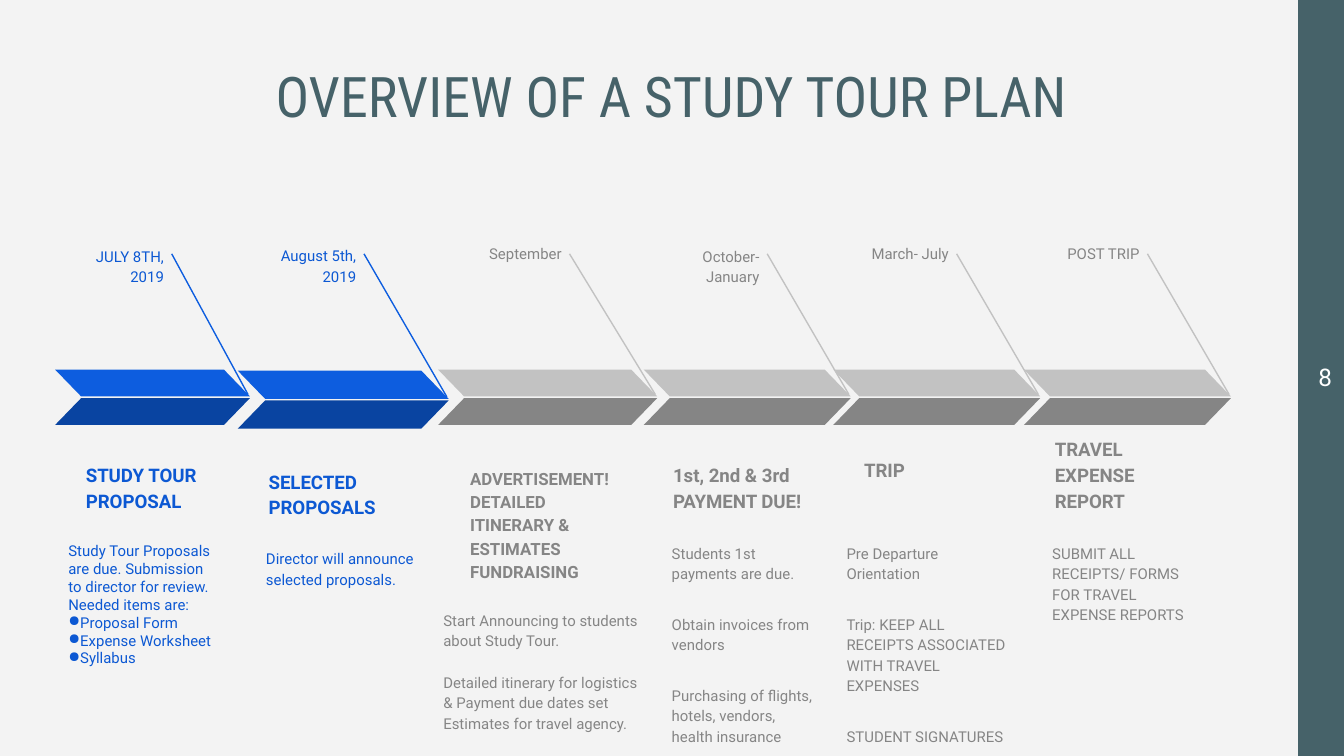
from dataclasses import dataclass

from lxml.etree import SubElement
from pptx import Presentation
from pptx.dml.color import RGBColor
from pptx.enum.shapes import MSO_CONNECTOR as Connector, MSO_SHAPE as Shape
from pptx.enum.text import MSO_ANCHOR as Anchor, PP_ALIGN as Align
from pptx.oxml.ns import qn
from pptx.util import Pt

BLUE = {"text": "0C58D3", "light": "0D5DDF", "dark": "0944A1"}
GREY = {"text": "858585", "light": "C2C2C2", "dark": "858585"}
TEAL, WHITE, PAPER = "466269", "FFFFFF", "F3F3F3"
INSET = 7.2
BULLET = "●"


@dataclass
class Stage:
    """Boxes are (left, top, width, height) from the corner of the stage."""
    box: tuple
    date: str
    heading: str
    body: list
    date_box: tuple
    heading_box: tuple
    body_box: tuple
    palette: dict
    heading_size: float = 10
    heading_anchor: Anchor = Anchor.BOTTOM
    body_spacing: float = 1.15
    band: float = 14.4


def para(text, before=0):
    return {"text": text, "before": before}


STAGES = [
    Stage((29.5, 124, 104.4), "JULY 8TH, 2019", "STUDY TOUR PROPOSAL",
          [para("Study Tour Proposals are due. Submission to director for review."),
           para("Needed items are:"), para(BULLET + "Proposal Form"),
           para(BULLET + "Expense Worksheet"), para(BULLET + "Syllabus")],
          (-4.3, 0, 69.8, 51), (9.4, 113, 85.7, 44.6), (0, 159, 95, 74),
          BLUE, body_spacing=1),
    Stage((127.4, 123.5, 113), "August 5th, 2019", "SELECTED PROPOSALS",
          [para("Director will announce selected proposals.")],
          (8, 0, 62.6, 25), (9.4, 115.5, 92.9, 46), (8, 162.5, 95, 76),
          BLUE, band=15.1),
    Stage((234.7, 124, 117.4), "September",
          "ADVERTISEMENT!\nDETAILED ITINERARY & ESTIMATES\nFUNDRAISING",
          [para("Start Announcing to students about Study Tour."),
           para("Detailed itinerary for logistics & Payment due dates set", 11),
           para("Estimates for travel agency.")],
          (5, 0, 68.4, 24), (10.1, 136.6, 96.5, 58.3), (-4.3, 195, 121.7, 114),
          GREY, heading_size=9),
    Stage((344.9, 124, 110.9), "October- January", "1st, 2nd & 3rd PAYMENT DUE!",
          [para("Students 1st payments are due."),
           para("Obtain invoices from vendors", 16),
           para("Purchasing of flights, hotels, vendors, health insurance", 16)],
          (0, 0, 69.1, 23), (8.6, 113, 90.7, 44.6), (7.9, 159, 93.6, 74), GREY),
    Stage((446.4, 124, 110.9), "March- July", "TRIP",
          [para("Pre Departure Orientation"),
           para("Trip: KEEP ALL RECEIPTS ASSOCIATED WITH TRAVEL EXPENSES", 16),
           para("STUDENT SIGNATURES", 16)],
          (0, 0, 69.1, 23), (9.4, 113, 90.7, 44.6), (0, 159, 101.5, 74),
          GREY, heading_anchor=Anchor.TOP),
    Stage((548.6, 124, 110.9), "POST TRIP", "TRAVEL EXPENSE REPORT",
          [para("SUBMIT ALL RECEIPTS/ FORMS FOR TRAVEL EXPENSE REPORTS")],
          (0, 0, 69.1, 23), (9.4, 113, 90.7, 44.6), (8, 159, 93.6, 74), GREY),
]


def rgb(color):
    return RGBColor.from_string(color)


def points(values):
    return [Pt(value) for value in values]


def add_bullet(paragraph, color):
    props = paragraph._p.get_or_add_pPr()
    props.set("marL", "0")
    props.set("indent", str(-Pt(4.5)))
    tint = SubElement(props, qn("a:buClr"))
    SubElement(tint, qn("a:srgbClr"), val=color)
    SubElement(props, qn("a:buChar"), char=BULLET)


def add_text(slide, box, paragraphs, color, size, name="Roboto", bold=False,
             align=Align.LEFT, anchor=Anchor.TOP, spacing=1.0):
    frame = slide.shapes.add_textbox(*points(box)).text_frame
    frame_format = {"word_wrap": True, "vertical_anchor": anchor}
    frame_format.update({f"margin_{side}": Pt(INSET)
                         for side in ("left", "top", "right", "bottom")})
    for key, value in frame_format.items():
        setattr(frame, key, value)
    for index, content in enumerate(paragraphs):
        paragraph = frame.add_paragraph() if index else frame.paragraphs[0]
        layout = {"alignment": align, "line_spacing": spacing,
                  "space_before": Pt(content["before"])}
        for key, value in layout.items():
            setattr(paragraph, key, value)
        if content["text"].startswith(BULLET):
            add_bullet(paragraph, color)
        run = paragraph.add_run()
        run.text = content["text"].lstrip(BULLET)
        for key, value in {"name": name, "size": Pt(size), "bold": bold}.items():
            setattr(run.font, key, value)
        run.font.color.rgb = rgb(color)


def add_block(slide, kind, box, color):
    block = slide.shapes.add_shape(kind, *points(box))
    block.shadow.inherit = False
    block.fill.solid()
    block.fill.fore_color.rgb = rgb(color)
    block.line.fill.background()
    return block


def add_arrow(slide, left, top, width, band, palette):
    """Two mirrored bands that together make a chevron pointing right."""
    for row, tone in enumerate(("light", "dark")):
        half = add_block(slide, Shape.PARALLELOGRAM,
                         (left, top + row * (band + 0.9), width, band), palette[tone])
        half.adjustments[0] = 0.97
        if tone == "light":
            half._element.spPr.get_or_add_xfrm().set("flipH", "1")


def add_leader(slide, start, end, color):
    leader = slide.shapes.add_connector(Connector.STRAIGHT, *points(start + end))
    leader.line.width = Pt(0.75)
    leader.line.color.rgb = rgb(color)
    SubElement(leader._element.spPr, qn("a:effectLst"))


def add_stage(slide, stage):
    left, top, width = stage.box
    ink = stage.palette["text"]

    def place(box):
        return left + box[0], top + box[1], box[2], box[3]

    date_box = place(stage.date_box)
    add_text(slide, date_box, [para(stage.date)], ink, 8,
             align=Align.RIGHT, spacing=1.15)
    add_text(slide, place(stage.heading_box),
             [para(line) for line in stage.heading.split("\n")], ink,
             stage.heading_size, bold=True, anchor=stage.heading_anchor, spacing=1.15)
    add_text(slide, place(stage.body_box), stage.body, ink, 8,
             spacing=stage.body_spacing)
    arrow_top = top + 74 + (stage.band - 14.4) * 1.5
    add_leader(slide, (date_box[0] + date_box[2] - 3, 136),
               (left + width - 1, arrow_top + stage.band - 1), stage.palette["light"])
    add_arrow(slide, left, arrow_top, width, stage.band, stage.palette)


def add_side_bar(slide, left, top, width, height, number):
    add_block(slide, Shape.RECTANGLE, (left, top, width, height), TEAL)
    add_text(slide, (left - 7.2, top + 187, 43.2, 31), [para(number)], WHITE, 13,
             align=Align.CENTER)


def main():
    deck = Presentation()
    deck.slide_width, deck.slide_height = Pt(720), Pt(405)
    slide = deck.slides.add_slide(deck.slide_layouts[6])
    slide.background.fill.solid()
    slide.background.fill.fore_color.rgb = rgb(PAPER)

    add_side_bar(slide, 695.5, 0, 24.5, 405, "8")
    add_text(slide, (79.2, 27.4, 561, 49), [para("OVERVIEW OF A STUDY TOUR PLAN")],
             TEAL, 30, name="Roboto Condensed", align=Align.CENTER,
             anchor=Anchor.BOTTOM)
    for stage in STAGES:
        add_stage(slide, stage)
    deck.save("out.pptx")


if __name__ == "__main__":
    main()
